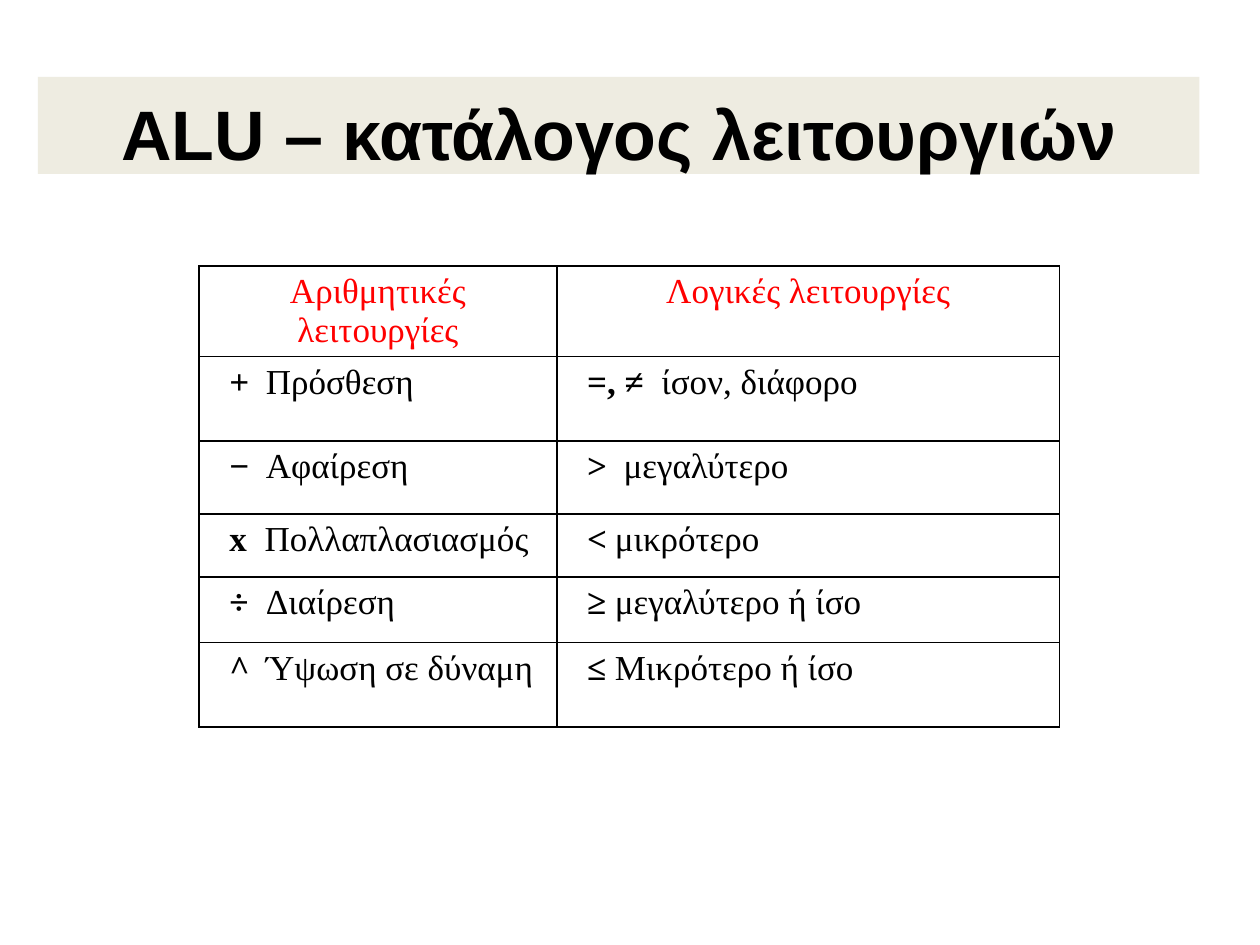
"""Build a slide listing the arithmetic and logical operations of an ALU."""
import dataclasses
import typing

import lxml.etree
import pptx
import pptx.dml.color
import pptx.enum.shapes
import pptx.enum.text
import pptx.oxml.ns
import pptx.slide
import pptx.table
import pptx.util

Inches = pptx.util.Inches
Pt = pptx.util.Pt
RGB = pptx.dml.color.RGBColor
Align = pptx.enum.text.PP_ALIGN


@dataclasses.dataclass(frozen=True)
class Theme:
    ink: RGB = RGB(0x00, 0x00, 0x00)
    heading: RGB = RGB(0xFF, 0x00, 0x00)
    banner: RGB = RGB(0xEE, 0xEC, 0xE1)
    title_font: str = "Arial"
    table_font: str = "Times New Roman"
    title_size: Pt = Pt(40)
    table_size: Pt = Pt(20)
    border: Pt = Pt(1)


class Operation(typing.NamedTuple):
    symbol: str
    name: str
    gap: float = 0.29


THEME = Theme()
TITLE = "ALU – κατάλογος λειτουργιών"
HEADINGS = ("Αριθμητικές λειτουργίες", "Λογικές λειτουργίες")
ARITHMETIC = (
    Operation("+", "Πρόσθεση"),
    Operation("−", "Αφαίρεση"),
    Operation("x", "Πολλαπλασιασμός", 0.28),
    Operation("÷", "Διαίρεση"),
    Operation("^", "Ύψωση σε δύναμη"),
)
LOGICAL = (
    Operation("=, ≠", "ίσον, διάφορο", 0.59),
    Operation(">", "μεγαλύτερο"),
    Operation("<", "μικρότερο", 0.22),
    Operation("≥", "μεγαλύτερο ή ίσο", 0.22),
    Operation("≤", "Μικρότερο ή ίσο", 0.22),
)
COLUMN_WIDTHS = (2.84, 3.99)
ROW_HEIGHTS = (0.72, 0.67, 0.58, 0.5, 0.52, 0.67)


def add_title(slide: pptx.slide.Slide) -> None:
    box = slide.shapes.add_shape(
        pptx.enum.shapes.MSO_SHAPE.RECTANGLE,
        Inches(0.3), Inches(0.61), Inches(9.22), Inches(0.77),
    )
    box.shadow.inherit = False
    box.fill.solid()
    box.fill.fore_color.rgb = THEME.banner
    box.line.fill.background()
    frame = box.text_frame
    frame.word_wrap = True
    frame.vertical_anchor = pptx.enum.text.MSO_ANCHOR.TOP
    frame.margin_top = Inches(0.11)
    para = frame.paragraphs[0]
    para.text = TITLE
    para.alignment = Align.CENTER
    para.font.name = THEME.title_font
    para.font.size = THEME.title_size
    para.font.bold = True
    para.font.color.rgb = THEME.ink


def style_cell(cell: pptx.table._Cell, color: RGB) -> None:
    qn = pptx.oxml.ns.qn
    properties = cell._tc.get_or_add_tcPr()
    for side in ("a:lnL", "a:lnR", "a:lnT", "a:lnB"):
        line = lxml.etree.SubElement(properties, qn(side), w=str(THEME.border))
        fill = lxml.etree.SubElement(line, qn("a:solidFill"))
        lxml.etree.SubElement(fill, qn("a:srgbClr"), val=str(THEME.ink))
    cell.fill.background()
    font = cell.text_frame.paragraphs[0].font
    font.name = THEME.table_font
    font.size = THEME.table_size
    font.color.rgb = color


def fill_heading(cell: pptx.table._Cell, text: str) -> None:
    para = cell.text_frame.paragraphs[0]
    para.text = text
    para.alignment = Align.CENTER
    style_cell(cell, THEME.heading)


def fill_operation(cell: pptx.table._Cell, operation: Operation) -> None:
    cell.margin_left = Inches(0.24)
    para = cell.text_frame.paragraphs[0]
    for text, bold in ((operation.symbol + "\t", True), (operation.name, False)):
        span = para.add_run()
        span.text = text
        span.font.bold = bold
    properties = para._p.get_or_add_pPr()
    properties.set("marL", str(Inches(operation.gap)))
    properties.set("indent", str(-Inches(operation.gap)))
    style_cell(cell, THEME.ink)


def add_operations(slide: pptx.slide.Slide) -> None:
    table = slide.shapes.add_table(
        len(ROW_HEIGHTS), len(COLUMN_WIDTHS), Inches(1.58), Inches(2.11),
        Inches(sum(COLUMN_WIDTHS)), Inches(sum(ROW_HEIGHTS)),
    ).table
    table.first_row = False
    table.horz_banding = False
    for column, width in zip(table.columns, COLUMN_WIDTHS):
        column.width = Inches(width)
    for row, height in zip(table.rows, ROW_HEIGHTS):
        row.height = Inches(height)
    for index, operations in enumerate((ARITHMETIC, LOGICAL)):
        fill_heading(table.cell(0, index), HEADINGS[index])
        for row_index, operation in enumerate(operations, start=1):
            fill_operation(table.cell(row_index, index), operation)


def main() -> None:
    deck = pptx.Presentation()
    deck.slide_width = Inches(10)
    deck.slide_height = Inches(7.5)
    page = deck.slides.add_slide(deck.slide_layouts[6])
    add_operations(page)
    add_title(page)
    deck.save("out.pptx")


if __name__ == "__main__":
    main()
